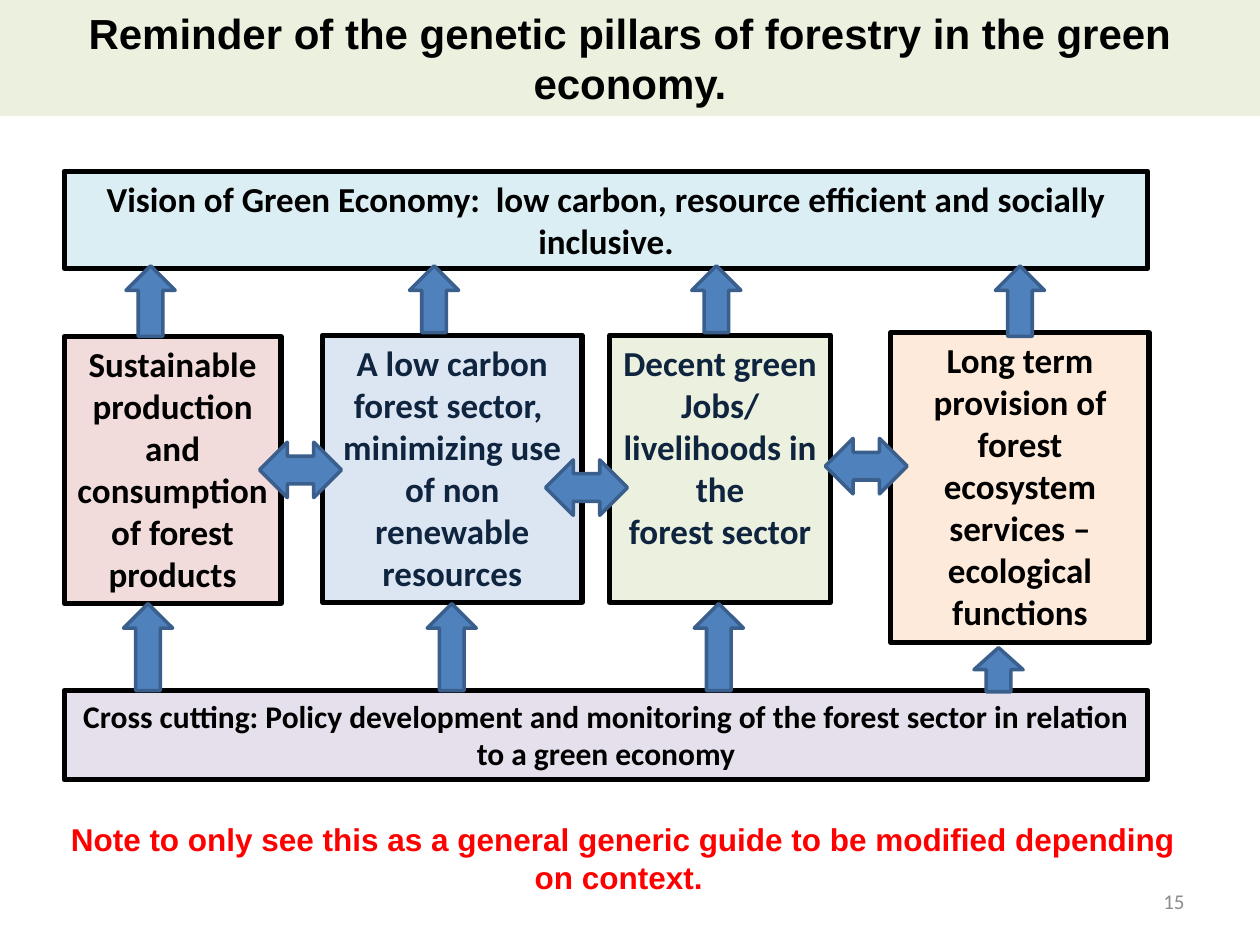
from dataclasses import dataclass

from lxml import etree
from pptx import Presentation
from pptx.dml.color import RGBColor
from pptx.enum.shapes import MSO_SHAPE
from pptx.enum.text import MSO_ANCHOR, MSO_AUTO_SIZE, PP_ALIGN
from pptx.oxml.ns import qn
from pptx.util import Inches, Pt

RECTANGLE = MSO_SHAPE.RECTANGLE
UP_ARROW = MSO_SHAPE.UP_ARROW
DOUBLE_ARROW = MSO_SHAPE.LEFT_RIGHT_ARROW
TOP, MIDDLE = MSO_ANCHOR.TOP, MSO_ANCHOR.MIDDLE
CENTER, RIGHT = PP_ALIGN.CENTER, PP_ALIGN.RIGHT
FIXED, GROW = MSO_AUTO_SIZE.NONE, MSO_AUTO_SIZE.SHAPE_TO_FIT_TEXT

BLACK, NAVY, RED, GREY = "000000", "0F243E", "FF0000", "8C8C8C"
PALE_GREEN = "EBF1DE"
ARROW_FILL, ARROW_LINE = "4F81BD", "3A5F8C"


@dataclass
class Place:
    left: float
    top: float
    width: float
    height: float

    def lengths(self) -> tuple:
        return tuple(Inches(n) for n in (self.left, self.top, self.width, self.height))


@dataclass
class TextStyle:
    size: int
    font: str = "Calibri"
    color: str = BLACK
    bold: bool = True
    align: PP_ALIGN = CENTER


@dataclass
class Panel:
    place: Place
    fill: str
    lines: list[str]
    style: TextStyle


PILLAR = TextStyle(20)
NAVY_PILLAR = TextStyle(20, color=NAVY)
PANELS = [
    Panel(Place(0.51, 1.36, 8.6, 0.77), "DBEEF4",
          ["Vision of Green Economy:  low carbon, resource efficient and socially inclusive."],
          PILLAR),
    Panel(Place(0.51, 2.67, 1.72, 2.12), "F2DCDB",
          ["Sustainable production and consumption of forest products"], PILLAR),
    Panel(Place(2.56, 2.66, 2.06, 2.12), "DCE6F2",
          ["A low carbon", "forest sector,  minimizing use of non renewable resources"],
          NAVY_PILLAR),
    Panel(Place(4.84, 2.66, 1.75, 2.12), PALE_GREEN,
          ["Decent green", "Jobs/", "livelihoods in the", "forest sector"], NAVY_PILLAR),
    Panel(Place(7.07, 2.64, 2.05, 2.46), "FDEADA",
          ["Long term provision of forest ecosystem services – ecological functions"], PILLAR),
    Panel(Place(0.51, 5.48, 8.6, 0.71), "E6E0EC",
          ["Cross cutting: Policy development and monitoring of the forest sector "
           "in relation to a green economy"], TextStyle(18)),
]

# left, top, height
UP_ARROWS = [
    (0.98, 4.79, 0.69), (3.39, 4.79, 0.69), (5.51, 4.79, 0.69), (7.73, 5.14, 0.35),
    (1.0, 2.11, 0.56), (3.25, 2.11, 0.53), (5.49, 2.11, 0.53), (7.9, 2.11, 0.56),
]
# left, top
DOUBLE_ARROWS = [(2.06, 3.51), (4.33, 3.65), (6.55, 3.48)]


def rgb(value: str) -> RGBColor:
    return RGBColor.from_string(value)


def write_text(box, lines: list[str], style: TextStyle, anchor=TOP, fit=FIXED) -> None:
    frame = box.text_frame
    frame.word_wrap = True
    frame.auto_size = fit
    frame.vertical_anchor = anchor
    for index, line in enumerate(lines):
        para = frame.paragraphs[0] if index == 0 else frame.add_paragraph()
        para.alignment = style.align
        span = para.add_run()
        span.text = line
        span.font.name = style.font
        span.font.size = Pt(style.size)
        span.font.bold = style.bold
        span.font.color.rgb = rgb(style.color)


def add_shape(page, kind: MSO_SHAPE, place: Place, fill: str, line: str, weight: float):
    """Add a filled shape whose outline has rounded joins."""
    shape = page.shapes.add_shape(kind, *place.lengths())
    shape.shadow.inherit = False
    shape.fill.solid()
    shape.fill.fore_color.rgb = rgb(fill)
    shape.line.color.rgb = rgb(line)
    shape.line.width = Pt(weight)
    outline = shape.element.spPr.find(qn("a:ln"))
    etree.SubElement(outline, qn("a:round"))
    return shape


def add_panel(page, panel: Panel) -> None:
    shape = add_shape(page, RECTANGLE, panel.place, panel.fill, BLACK, 3)
    write_text(shape, panel.lines, panel.style, fit=GROW)


def add_arrow(page, kind: MSO_SHAPE, place: Place) -> None:
    add_shape(page, kind, place, ARROW_FILL, ARROW_LINE, 2)


def add_title(page, place: Place, text: str) -> None:
    title = page.shapes.title
    title.left, title.top, title.width, title.height = place.lengths()
    title.fill.solid()
    title.fill.fore_color.rgb = rgb(PALE_GREEN)
    write_text(title, [text], TextStyle(24, font="Arial"), MIDDLE)


def add_label(page, place: Place, text: str, style: TextStyle, anchor=TOP) -> None:
    box = page.shapes.add_textbox(*place.lengths())
    write_text(box, [text], style, anchor)


def main() -> None:
    deck = Presentation()
    deck.slide_width, deck.slide_height = Inches(10), Inches(7.5)
    page = deck.slides.add_slide(deck.slide_layouts.get_by_name("Title Only"))

    add_title(page, Place(0, 0, 10, 0.92),
              "Reminder of the genetic pillars of forestry in the green economy.")
    for panel in PANELS:
        add_panel(page, panel)
    for left, top, height in UP_ARROWS:
        add_arrow(page, UP_ARROW, Place(left, top, 0.39, height))
    for left, top in DOUBLE_ARROWS:
        add_arrow(page, DOUBLE_ARROW, Place(left, top, 0.65, 0.44))
    add_label(page, Place(0.3, 6.46, 9.29, 0.71),
              "Note to only see this as a general generic guide to be modified "
              "depending on context. ", TextStyle(18, font="Arial", color=RED))
    add_label(page, Place(7.17, 6.95, 2.33, 0.4), "15",
              TextStyle(12, color=GREY, bold=False, align=RIGHT), MIDDLE)
    deck.save("out.pptx")


if __name__ == "__main__":
    main()
